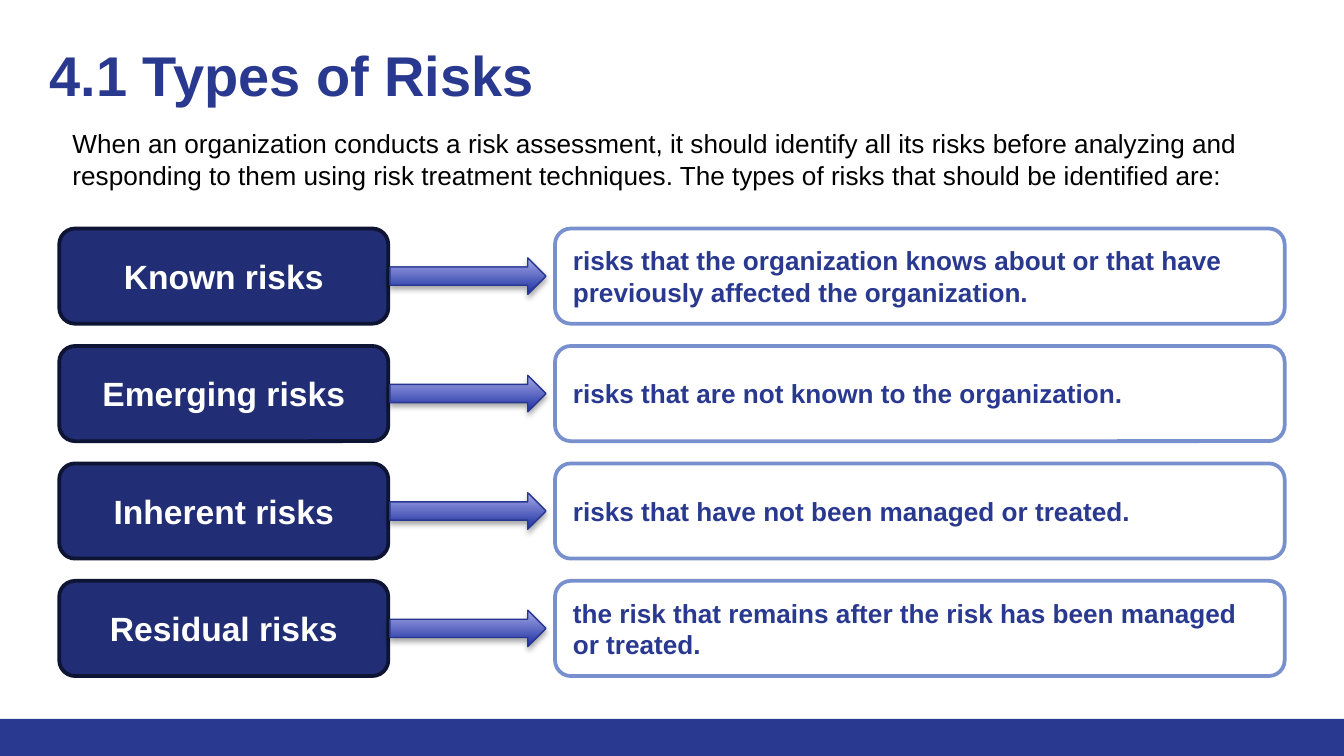
from lxml import etree
from pptx import Presentation
from pptx.dml.color import RGBColor
from pptx.enum import shapes, text
from pptx.oxml import ns
from pptx.util import Cm, Pt

COLORS = {
    "royal": "2A3990", "navy": "212D74", "midnight": "0E1433",
    "periwinkle": "7890CD", "white": "FFFFFF", "black": "000000",
    "arrow_dark": "1B2E9F", "arrow_light": "A6AAE9", "arrow_edge": "27368F",
}
RISKS = [
    ("Known risks", "risks that the organization knows about or that have previously affected the organization."),
    ("Emerging risks", "risks that are not known to the organization."),
    ("Inherent risks", "risks that have not been managed or treated."),
    ("Residual risks", "the risk that remains after the risk has been managed or treated."),
]
FIRST_TOP, PITCH, ROW_HEIGHT, ARROW_HEIGHT = 4.32, 2.22, 1.8, 0.69


def write(part, words, size, color, bold, align=text.PP_ALIGN.LEFT, anchor=text.MSO_ANCHOR.TOP):
    frame = part.text_frame
    frame.word_wrap = True
    frame.vertical_anchor = anchor
    paragraph = frame.paragraphs[0]
    paragraph.alignment = align
    run = paragraph.add_run()
    run.text = words
    for name, value in {"name": "Arial", "size": Pt(size), "bold": bold}.items():
        setattr(run.font, name, value)
    run.font.color.rgb = RGBColor.from_string(COLORS[color])


def draw(kind, left, top, width, height, fill=None, line=None, weight=2):
    part = slide.shapes.add_shape(kind, Cm(left), Cm(top), Cm(width), Cm(height))
    part.shadow.inherit = False
    if fill:
        part.fill.solid()
        part.fill.fore_color.rgb = RGBColor.from_string(COLORS[fill])
    if line:
        part.line.color.rgb = RGBColor.from_string(COLORS[line])
        part.line.width = Pt(weight)
    else:
        part.line.fill.background()
    return part


deck = Presentation()
deck.slide_width, deck.slide_height = Cm(25.4), Cm(14.29)
slide = deck.slides.add_slide(deck.slide_layouts[6])

draw(shapes.MSO_SHAPE.RECTANGLE, 0, 13.59, 25.4, 0.7, "royal")

title = slide.shapes.add_textbox(Cm(0.69), Cm(0.51), Cm(23.37), Cm(2.26))
for side in ("left", "top", "right", "bottom"):
    setattr(title.text_frame, f"margin_{side}", Cm(0.25))
write(title, "4.1 Types of Risks", 30, "royal", True)

intro = slide.shapes.add_textbox(Cm(1.12), Cm(2.29), Cm(22.94), Cm(1.45))
write(intro, "When an organization conducts a risk assessment, it should identify all its risks before "
      "analyzing and responding to them using risk treatment techniques. "
      "The types of risks that should be identified are:", 14, "black", False)

for row, (risk, meaning) in enumerate(RISKS):
    top = FIRST_TOP + row * PITCH
    label = draw(shapes.MSO_SHAPE.ROUNDED_RECTANGLE, 1.12, top, 6.22, ROW_HEIGHT, "navy", "midnight")
    write(label, risk, 18, "white", True, text.PP_ALIGN.CENTER, text.MSO_ANCHOR.MIDDLE)

    definition = draw(shapes.MSO_SHAPE.ROUNDED_RECTANGLE, 10.49, top, 13.79, ROW_HEIGHT, "white", "periwinkle")
    write(definition, meaning, 14, "royal", True, anchor=text.MSO_ANCHOR.MIDDLE)

    arrow_top = top + (ROW_HEIGHT - ARROW_HEIGHT) / 2
    arrow = draw(shapes.MSO_SHAPE.RIGHT_ARROW, 7.37, arrow_top, 2.95, ARROW_HEIGHT,
                 line="arrow_edge", weight=0.75)
    arrow.fill.gradient()
    arrow.fill.gradient_angle = 90
    for stop, position, color in zip(arrow.fill.gradient_stops, (0, 1), ("arrow_dark", "arrow_light")):
        stop.position = position
        stop.color.rgb = RGBColor.from_string(COLORS[color])
    effects = arrow.element.spPr.find(ns.qn("a:effectLst"))
    shadow = etree.SubElement(effects, ns.qn("a:outerShdw"), blurRad=str(Pt(3.1)), dist=str(Pt(1.8)),
                              dir="5400000", rotWithShape="0")
    shade = etree.SubElement(shadow, ns.qn("a:srgbClr"), val=COLORS["black"])
    etree.SubElement(shade, ns.qn("a:alpha"), val="35000")

deck.save("out.pptx")
